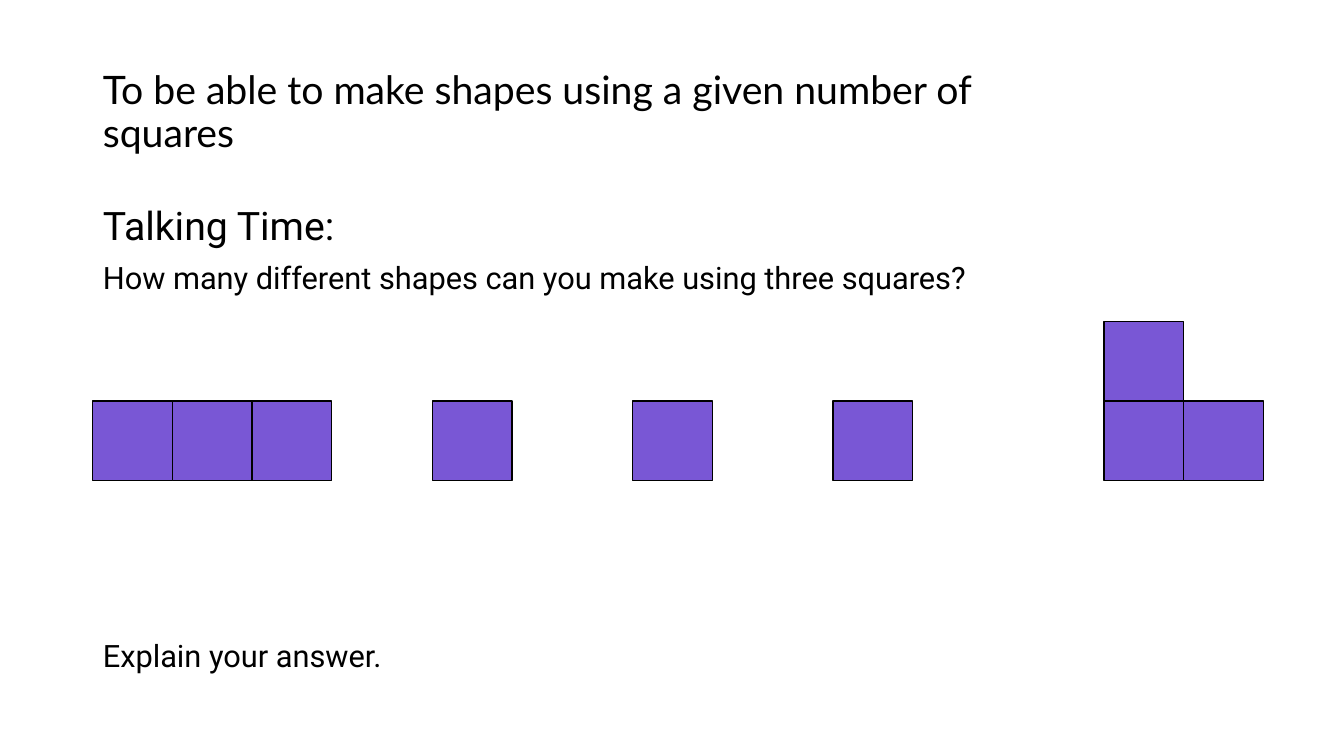
"""Build a slide about making shapes from three squares."""
from pptx import Presentation
from pptx import util as u
from pptx.dml import color
from pptx.enum import shapes, text
from pptx.oxml import xmlchemy
from lxml import etree
from pptx.oxml import ns


def paint(hue):
    return color.RGBColor.from_string(hue)


def write(para, words, size, face, gap):
    props = para._p.get_or_add_pPr()
    props.set("marL", "0")
    props.set("indent", "0")
    etree.SubElement(props, ns.qn("a:buNone"))
    para.alignment = text.PP_ALIGN.LEFT
    para.line_spacing = 0.9
    para.space_before = u.Pt(gap)
    run = para.add_run()
    run.text = words
    run.font.size = u.Pt(size)
    run.font.name = face
    run.font.color.rgb = paint("000000")


deck = Presentation()
deck.slide_width = u.Inches(13.33)
deck.slide_height = u.Inches(7.5)
slide = deck.slides.add_slide(deck.slide_layouts[1])

title = slide.shapes.title
body = slide.placeholders[1]
for box, top, wide, high, anchor in (
    (title, 0.4, 9.6, 1.45, text.MSO_ANCHOR.MIDDLE),
    (body, 2, 11.5, 4.76, text.MSO_ANCHOR.TOP),
):
    box.left, box.top = u.Inches(0.92), u.Inches(top)
    box.width, box.height = u.Inches(wide), u.Inches(high)
    box.text_frame.word_wrap = True
    box.text_frame.auto_size = text.MSO_AUTO_SIZE.NONE
    box.text_frame.vertical_anchor = anchor

goal = "To be able to make shapes using a given number of squares"
write(title.text_frame.paragraphs[0], goal, 28, "Lato", 0)

lines = (
    ("Talking Time:", 28, 0),
    ("How many different shapes can you make using three squares?", 22, 10),
    ("Explain your answer.", 22, 246),
)
frame = body.text_frame
for i, (words, size, gap) in enumerate(lines):
    para = frame.add_paragraph() if i else frame.paragraphs[0]
    write(para, words, size, "Roboto", gap)

side = 0.79
base = 3.98
row = [(0.92 + i * side, base) for i in range(3)]
loose = [(4.29 + i * 1.985, base) for i in range(3)]
bend = [(10.95, base - side), (10.95, base), (10.95 + side, base)]
for left, top in row + loose + bend:
    tile = slide.shapes.add_shape(
        shapes.MSO_SHAPE.RECTANGLE,
        u.Inches(left), u.Inches(top), u.Inches(side), u.Inches(side))
    tile.shadow.inherit = False
    tile.fill.solid()
    tile.fill.fore_color.rgb = paint("7957D5")
    tile.line.color.rgb = paint("000000")
    tile.line.width = u.Pt(1)

deck.save("out.pptx")
